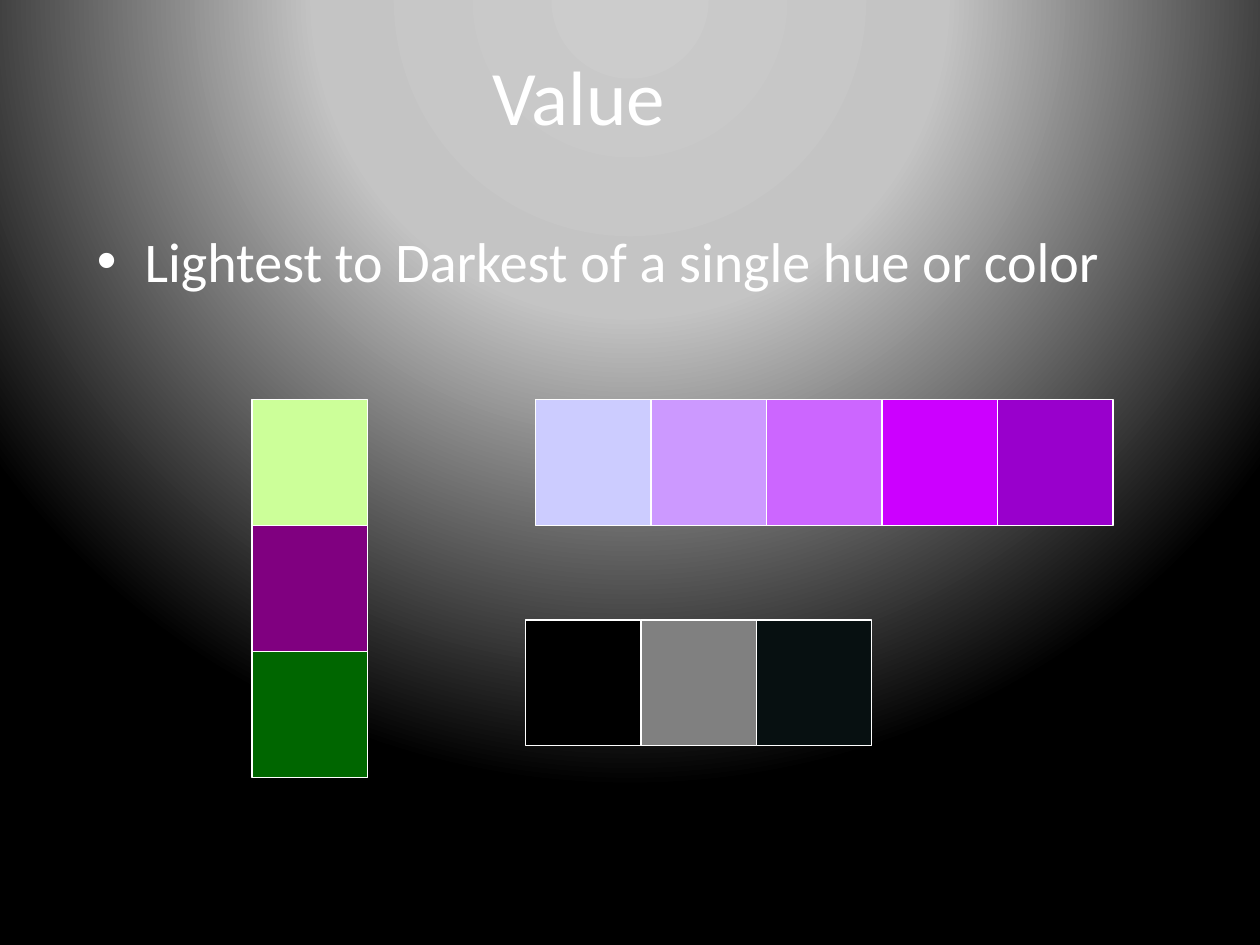
from dataclasses import dataclass

from lxml import etree
from pptx import Presentation
from pptx.dml.color import RGBColor
from pptx.enum.shapes import MSO_SHAPE
from pptx.enum.text import MSO_ANCHOR, PP_ALIGN
from pptx.oxml import parse_xml
from pptx.oxml.ns import nsdecls, qn
from pptx.util import Inches, Pt

RECT = MSO_SHAPE.RECTANGLE
TOP, MIDDLE = MSO_ANCHOR.TOP, MSO_ANCHOR.MIDDLE
LEFT, CENTER = PP_ALIGN.LEFT, PP_ALIGN.CENTER
FONT = "Calibri"
WHITE = "FFFFFF"
WIDE, HIGH = 11 / 12, 1
GLOW = [(0, "CCCCCC"), (40, "C4C4C4"), (100, "000000")]


@dataclass
class Scale:
    """A strip of touching swatches, running across or down."""
    left: float
    top: float
    hues: list[str]
    down: bool = False


SCALES = [
    Scale(2, 3.17, ["CCFF99", "800080", "006600"], down=True),
    Scale(4.25, 3.17, ["CCCCFF", "CC99FF", "CC66FF", "CC00FF", "9900CC"]),
    Scale(4.17, 4.92, ["000000", "808080", "071011"]),
]


def color(code: str) -> RGBColor:
    return RGBColor.from_string(code)


def add_glow(slide) -> None:
    """Fill the background with a round glow centred above the slide."""
    slide.background.fill.gradient()
    old = slide.element.find(".//" + qn("a:gradFill"))
    stops = "".join(
        f'<a:gs pos="{pos * 1000}"><a:srgbClr val="{code}"/></a:gs>'
        for pos, code in GLOW)
    new = parse_xml(
        f'<a:gradFill {nsdecls("a")} rotWithShape="1"><a:gsLst>{stops}</a:gsLst>'
        '<a:path path="circle"><a:fillToRect l="50000" t="-80000" r="50000" '
        'b="180000"/></a:path></a:gradFill>')
    old.getparent().replace(old, new)


def add_text(slide, text: str, left: float, top: float, width: float,
             height: float, *, size: float, align=LEFT, anchor=TOP,
             bullet: bool = False) -> None:
    box = slide.shapes.add_textbox(
        Inches(left), Inches(top), Inches(width), Inches(height))
    frame = box.text_frame
    frame.word_wrap = True
    frame.vertical_anchor = anchor
    para = frame.paragraphs[0]
    para.alignment = align
    run = para.add_run()
    run.text = text
    run.font.name = FONT
    run.font.size = Pt(size)
    run.font.color.rgb = color(WHITE)
    if bullet:
        add_bullet(para, 0.38)


def add_bullet(para, indent: float) -> None:
    props = para._p.get_or_add_pPr()
    props.set("marL", str(Inches(indent)))
    props.set("indent", str(-Inches(indent)))
    space = etree.SubElement(props, qn("a:spcBef"))
    etree.SubElement(space, qn("a:spcPct"), val="20000")
    etree.SubElement(props, qn("a:buFont"), typeface="Arial")
    etree.SubElement(props, qn("a:buChar"), char="•")


def add_scale(slide, scale: Scale) -> None:
    for i, hue in enumerate(scale.hues):
        left = scale.left + (0 if scale.down else i * WIDE)
        top = scale.top + (i * HIGH if scale.down else 0)
        swatch = slide.shapes.add_shape(
            RECT, Inches(left), Inches(top), Inches(WIDE), Inches(HIGH))
        swatch.shadow.inherit = False
        swatch.fill.solid()
        swatch.fill.fore_color.rgb = color(hue)
        swatch.line.color.rgb = color(WHITE)
        swatch.line.width = Pt(0.75)


def main() -> None:
    deck = Presentation()
    deck.slide_width, deck.slide_height = Inches(10), Inches(7.5)
    slide = deck.slides.add_slide(deck.slide_layouts[6])
    add_glow(slide)
    add_text(slide, "Value", 0.21, 0.25, 8.77, 1,
             size=44, align=CENTER, anchor=MIDDLE)
    add_text(slide, "Lightest to Darkest of a single hue or color",
             0.67, 1.75, 8.67, 4.83, size=32, bullet=True)
    for scale in SCALES:
        add_scale(slide, scale)
    deck.save("out.pptx")


if __name__ == "__main__":
    main()
